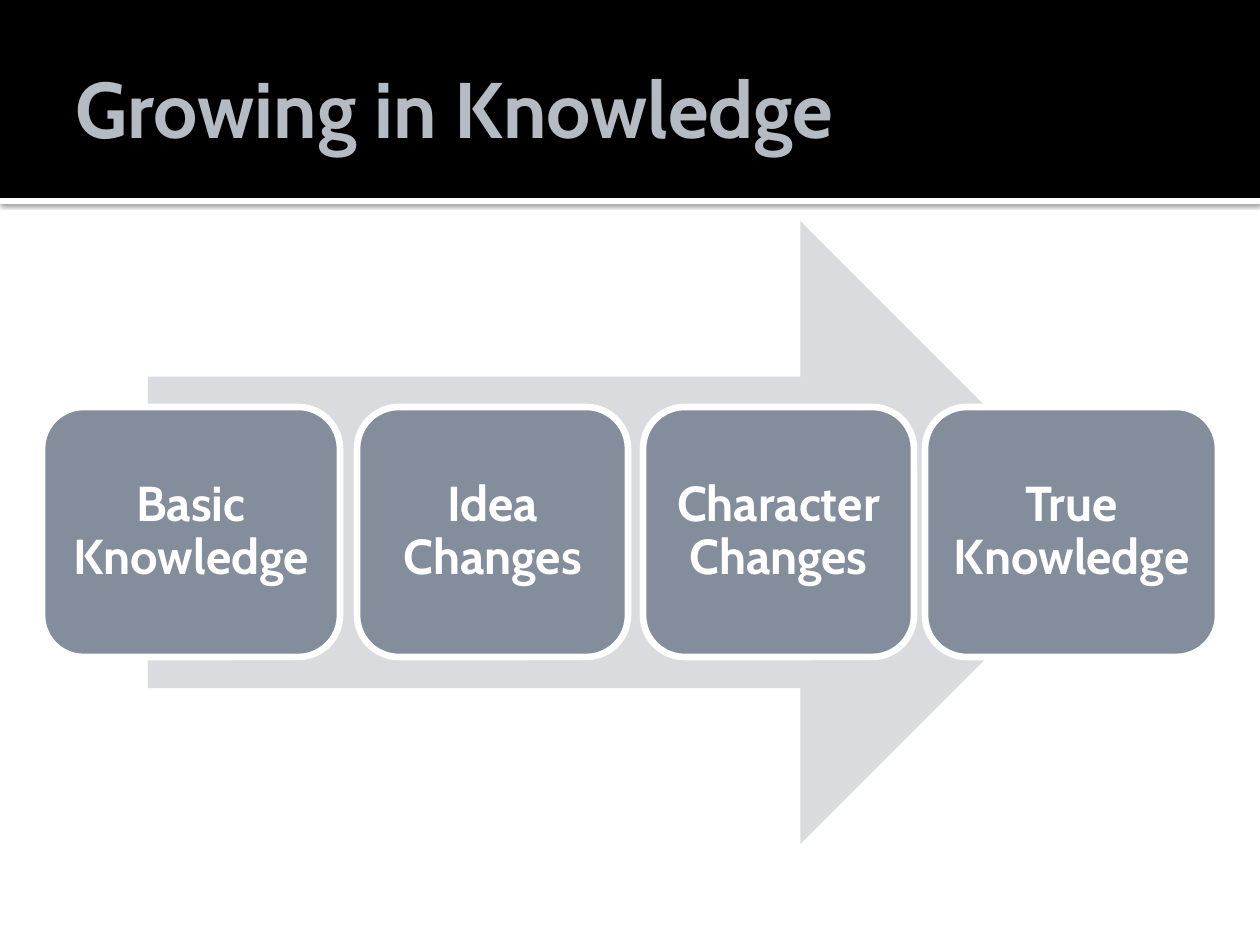
from lxml import etree
from pptx import Presentation
from pptx.dml.color import RGBColor
from pptx.enum.shapes import MSO_SHAPE as Shape
from pptx.enum.text import MSO_ANCHOR as Anchor, PP_ALIGN as Align
from pptx.oxml import parse_xml
from pptx.util import Emu, Pt

TITLE = "Growing in Knowledge"
STEPS = [  # label, left, width
    ("Basic Knowledge", 42, 298),
    ("Idea Changes", 357, 271),
    ("Character Changes", 643, 271),
    ("True Knowledge", 925, 293),
]
STEP_TOP, STEP_HEIGHT = 407, 250
HEADER_HEIGHT, RULE_HEIGHT = 198, 6
COLORS = {
    "header": "000000",
    "white": "FFFFFF",
    "title": "B5BBC3",
    "arrow": "D9DBDE",
    "step": "838D9B",
}
FONT = "Cabin"
RULE_SHADOW = (
    '<a:effectLst xmlns:a="http://schemas.openxmlformats.org/drawingml/2006/main">'
    '<a:outerShdw blurRad="31750" dist="10160" dir="5400000" rotWithShape="0">'
    '<a:srgbClr val="000000"><a:alpha val="60000"/></a:srgbClr>'
    '</a:outerShdw></a:effectLst>'
)


def px(length):
    return Emu(round(length * 914400 / 126))


def color(name):
    return RGBColor.from_string(COLORS[name])


def add_block(slide, kind, bounds, fill):
    block = slide.shapes.add_shape(kind, *map(px, bounds))
    block.shadow.inherit = False
    block.fill.solid()
    block.fill.fore_color.rgb = color(fill)
    block.line.fill.background()
    return block


def write(shape, text, size, ink, align, insets):
    """Fill a shape with one bold, vertically centred paragraph."""
    frame = shape.text_frame
    frame.word_wrap = True
    frame.vertical_anchor = Anchor.MIDDLE
    for side, inset in zip(("left", "top", "right", "bottom"), insets):
        setattr(frame, f"margin_{side}", px(inset))
    para = frame.paragraphs[0]
    para.alignment = align
    span = para.add_run()
    span.text = text
    for name, value in {"name": FONT, "size": Pt(size), "bold": True}.items():
        setattr(span.font, name, value)
    span.font.color.rgb = color(ink)
    return para


def add_header(slide):
    rule = add_block(slide, Shape.RECTANGLE, (0, HEADER_HEIGHT, 1260, RULE_HEIGHT), "white")
    properties = rule.fill._xPr
    properties.replace(properties.find("{*}effectLst"), parse_xml(RULE_SHADOW))
    add_block(slide, Shape.RECTANGLE, (0, 0, 1260, HEADER_HEIGHT), "header")

    title = slide.shapes.title
    title.left, title.top, title.width, title.height = map(px, (63, 21, 1134, 173))
    write(title, TITLE, 45, "title", Align.LEFT, (13, 6, 6, 6))
    slide.shapes._spTree.append(title._element)  # in front of the header bar


def add_step(slide, label, left, width):
    bounds = (left, STEP_TOP, width, STEP_HEIGHT)
    step = add_block(slide, Shape.ROUNDED_RECTANGLE, bounds, "step")
    step.line.color.rgb = color("white")
    step.line.width = Pt(3.78)
    para = write(step, label, 28, "white", Align.CENTER, (14,) * 4)
    para.line_spacing = 0.9


def main():
    deck = Presentation()
    deck.slide_width, deck.slide_height = px(1260), px(945)
    slide = deck.slides.add_slide(deck.slide_layouts[5])
    add_header(slide)
    add_block(slide, Shape.RIGHT_ARROW, (148, 221, 964, 623), "arrow")
    for step in STEPS:
        add_step(slide, *step)
    deck.save("out.pptx")


if __name__ == "__main__":
    main()
